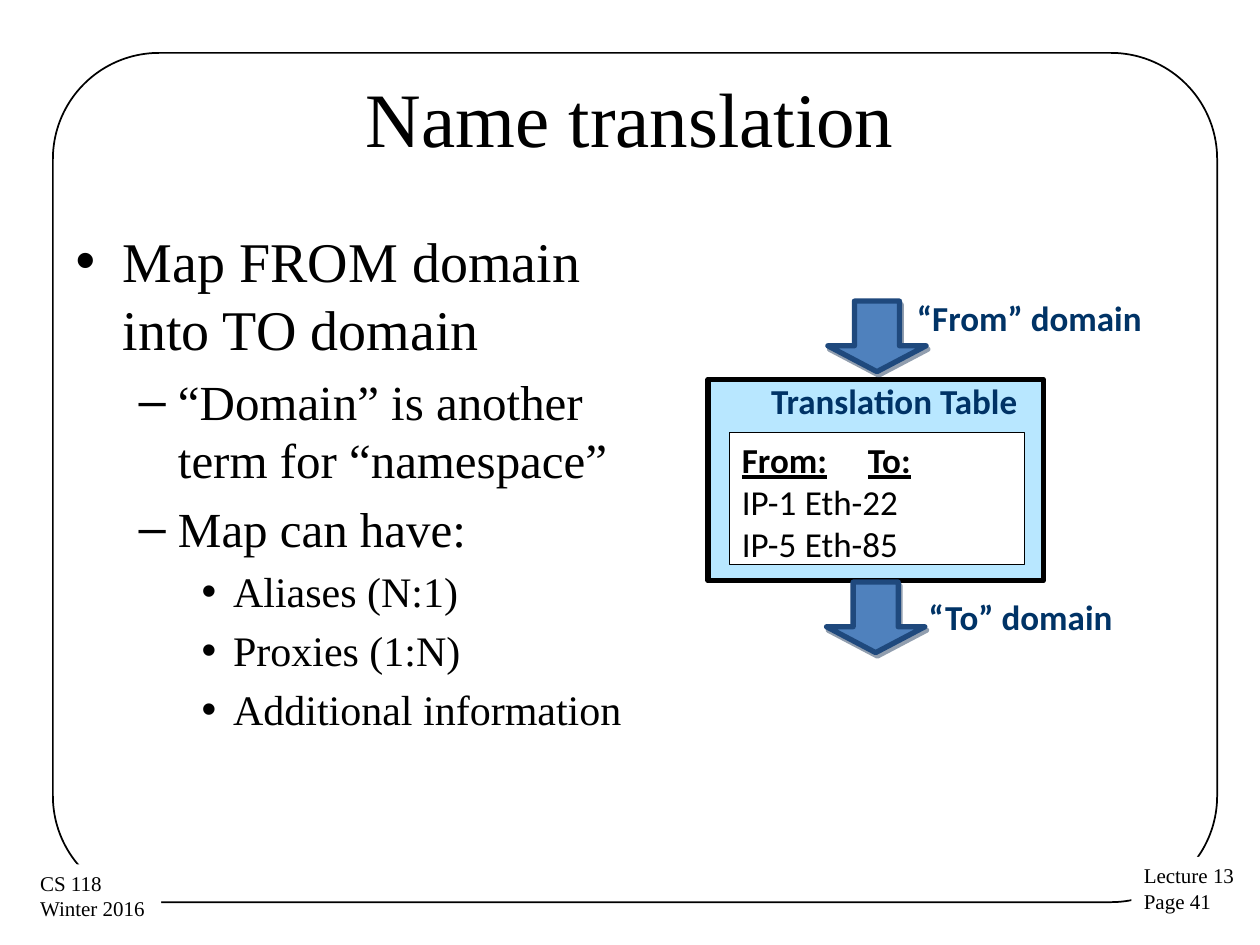
import pptx
import pptx.util
import pptx.dml.color
import pptx.enum.shapes
import pptx.enum.text
import lxml.etree

Inches, Pt = pptx.util.Inches, pptx.util.Pt
RGBColor = pptx.dml.color.RGBColor
SHAPE = pptx.enum.shapes.MSO_SHAPE
ALIGN = pptx.enum.text.PP_ALIGN
ANCHOR = pptx.enum.text.MSO_ANCHOR

BLACK = RGBColor(0x00, 0x00, 0x00)
WHITE = RGBColor(0xFF, 0xFF, 0xFF)
NAVY = RGBColor(0x00, 0x33, 0x66)
PALE_BLUE = RGBColor(0xB8, 0xE7, 0xFF)
ARROW_FILL = RGBColor(0x4F, 0x81, 0xBD)
ARROW_LINE = RGBColor(0x1F, 0x49, 0x7D)
SHADOW = RGBColor(0x24, 0x3F, 0x60)
SERIF, SANS = "Times New Roman", "Calibri"

# Content: body lines are (level, text); "\v" is a line break
TITLE = "Name translation"
BODY = [
    (0, "Map FROM domain\vinto TO domain"),
    (1, "“Domain” is another\vterm for “namespace”"),
    (1, "Map can have:"),
    (2, "Aliases (N:1)"),
    (2, "Proxies (1:N)"),
    (2, "Additional information"),
]
LEVEL_SIZES = [32, 28, 24]
FOOTERS = [
    ((8.98, 6.8, 0.93, 0.51), ["Lecture 13", "Page 41"]),
    ((0.22, 6.86, 1.06, 0.51), ["CS 118", "Winter 2016"]),
]
TABLE_TITLE = "Translation Table"
TABLE_HEADER = "From:\tTo:"
TABLE_ROWS = ["IP-1\tEth-22", "IP-5\tEth-85"]
ARROWS = [(6.57, 2.39, 0.78, 0.56), (6.56, 4.62, 0.78, 0.56)]
LABELS = [
    ((7.17, 2.31, 2, 0.46), "“From” domain"),
    ((7.26, 4.69, 1.68, 0.47), "“To” domain"),
]

# Formats
TITLE_FONT = {"name": SERIF, "size": Pt(44)}
FOOTER_FONT = {"name": SERIF, "size": Pt(12)}
LABEL_FONT = {"name": SANS, "size": Pt(20), "bold": True}
HEADER_FONT = {"name": SANS, "size": Pt(20), "bold": True, "underline": True}
ROW_FONT = {"name": SANS, "size": Pt(20), "bold": False}


def set_values(target, values):
    for name, value in values.items():
        setattr(target, name, value)


def place(shape, box):
    names = ("left", "top", "width", "height")
    set_values(shape, dict(zip(names, map(Inches, box))))


def write(paragraph, text, font, color=BLACK, **layout):
    paragraph.text = text
    set_values(paragraph, layout)
    for run in paragraph.runs:
        set_values(run.font, font)
        run.font.color.rgb = color


def write_lines(frame, lines, font, color=BLACK, **layout):
    for index, line in enumerate(lines):
        paragraph = frame.paragraphs[0] if index == 0 else frame.add_paragraph()
        write(paragraph, line, font, color, **layout)


def set_margins(frame, horizontal, vertical):
    set_values(frame, {
        "margin_left": Inches(horizontal), "margin_right": Inches(horizontal),
        "margin_top": Inches(vertical), "margin_bottom": Inches(vertical),
        "vertical_anchor": ANCHOR.TOP, "word_wrap": True})


def add_shape(slide, kind, box, fill=None, line=None, line_width=1):
    shape = slide.shapes.add_shape(kind, *map(Inches, box))
    shape.shadow.inherit = False
    if fill is None:
        shape.fill.background()
    else:
        shape.fill.solid()
        shape.fill.fore_color.rgb = fill
    if line is None:
        shape.line.fill.background()
    else:
        shape.line.color.rgb = line
        shape.line.width = Pt(line_width)
    set_margins(shape.text_frame, 0.1, 0.05)
    return shape


def add_shadow(shape):
    namespace = pptx.oxml.ns.nsdecls("a")
    effects = shape.element.spPr.find(pptx.oxml.ns.qn("a:effectLst"))
    effects.append(lxml.etree.fromstring(
        f'<a:outerShdw {namespace} dist="{Pt(2.2)}" dir="{63 * 60000}" '
        f'algn="ctr" rotWithShape="0"><a:srgbClr val="{SHADOW}">'
        '<a:alpha val="50000"/></a:srgbClr></a:outerShdw>'))


def main():
    presentation = pptx.Presentation()
    presentation.slide_width, presentation.slide_height = Inches(10), Inches(7.5)
    slide = presentation.slides.add_slide(presentation.slide_layouts[1])

    # Frame and footers
    frame = add_shape(slide, SHAPE.ROUNDED_RECTANGLE,
                      (0.42, 0.42, 9.24, 6.74), line=BLACK)
    frame.adjustments[0] = 0.125
    for box, lines in FOOTERS:
        footer = add_shape(slide, SHAPE.RECTANGLE, box, WHITE)
        footer.text_frame.word_wrap = False
        write_lines(footer.text_frame, lines, FOOTER_FONT, alignment=ALIGN.LEFT)

    # Title and bullet list; bullets and indents come from the template
    title, body = slide.shapes.title, slide.placeholders[1]
    place(title, (0.5, 0.3, 9, 1.25))
    title.text_frame.vertical_anchor = ANCHOR.MIDDLE
    write(title.text_frame.paragraphs[0], TITLE, TITLE_FONT, alignment=ALIGN.CENTER)
    place(body, (0.5, 1.75, 9, 4.95))
    for index, (level, text) in enumerate(BODY):
        paragraph = (body.text_frame.add_paragraph() if index
                     else body.text_frame.paragraphs[0])
        font = {"name": SERIF, "size": Pt(LEVEL_SIZES[level])}
        write(paragraph, text, font, level=level)
    body.text_frame.paragraphs[0].space_before = Pt(0)

    # Translation table
    panel = add_shape(slide, SHAPE.RECTANGLE, (5.62, 3.01, 2.66, 1.6),
                      PALE_BLUE, BLACK, 3)
    set_margins(panel.text_frame, 0, 0)
    panel.text_frame.margin_left = Inches(0.5)
    write(panel.text_frame.paragraphs[0], TABLE_TITLE, LABEL_FONT, NAVY,
          alignment=ALIGN.LEFT)
    entries = add_shape(slide, SHAPE.RECTANGLE, (5.79, 3.43, 2.34, 1.05),
                        WHITE, BLACK, 0.75)
    write_lines(entries.text_frame, [TABLE_HEADER, *TABLE_ROWS], ROW_FONT,
                alignment=ALIGN.LEFT)
    # Underline the words of the header but not the gap between them
    header = entries.text_frame.paragraphs[0]
    header.clear()
    for part in TABLE_HEADER.partition("\t"):
        run = header.add_run()
        run.text = part
        set_values(run.font, HEADER_FONT)
        run.font.underline = part != "\t"
        run.font.color.rgb = BLACK

    # Arrows and their labels
    for box in ARROWS:
        arrow = add_shape(slide, SHAPE.DOWN_ARROW, box, ARROW_FILL, ARROW_LINE, 3)
        arrow.adjustments[0], arrow.adjustments[1] = 0.458, 0.366
        add_shadow(arrow)
    for box, text in LABELS:
        label = slide.shapes.add_textbox(*map(Inches, box))
        set_margins(label.text_frame, 0.07, 0.04)
        write(label.text_frame.paragraphs[0], text, LABEL_FONT, NAVY,
              alignment=ALIGN.CENTER)

    presentation.save("out.pptx")


if __name__ == "__main__":
    main()
